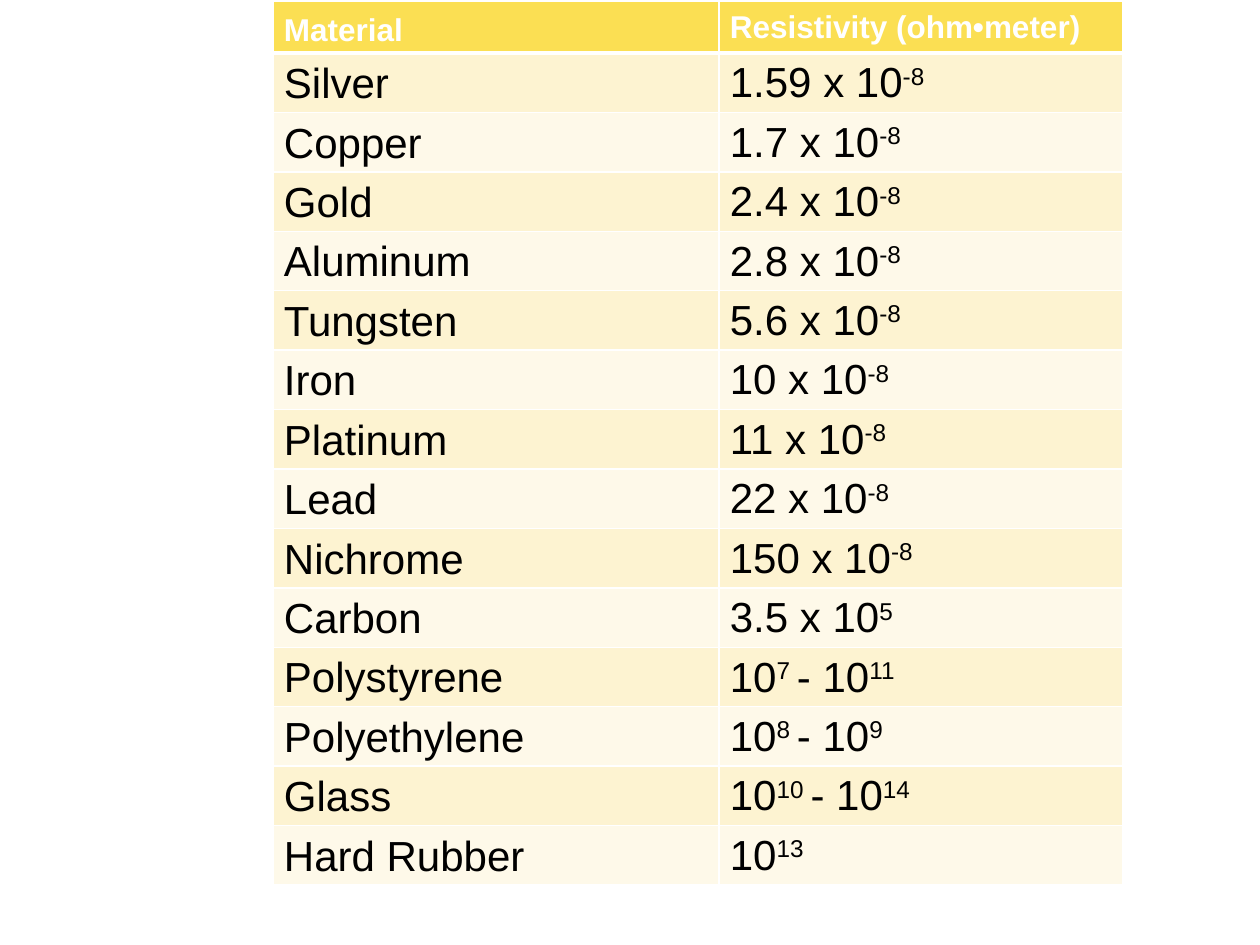
from lxml.etree import SubElement
from pptx import Presentation
from pptx.dml.color import RGBColor
from pptx.enum.text import MSO_ANCHOR
from pptx.oxml.ns import qn
from pptx.util import Pt

HEADINGS = ("Material", "Resistivity (ohm•meter)")
# Pieces of each value alternate between baseline and superscript.
RESISTIVITIES = [
    ("Silver", ("1.59 x 10", "-8")),
    ("Copper", ("1.7 x 10", "-8")),
    ("Gold", ("2.4 x 10", "-8")),
    ("Aluminum", ("2.8 x 10", "-8")),
    ("Tungsten", ("5.6 x 10", "-8")),
    ("Iron", ("10 x 10", "-8")),
    ("Platinum", ("11 x 10", "-8")),
    ("Lead", ("22 x 10", "-8")),
    ("Nichrome", ("150 x 10", "-8")),
    ("Carbon", ("3.5 x 10", "5")),
    ("Polystyrene", ("10", "7 ", "- 10", "11")),
    ("Polyethylene", ("10", "8 ", "- 10", "9")),
    ("Glass", ("10", "10 ", "- 10", "14")),
    ("Hard Rubber", ("10", "13")),
]
COLORS = {
    "header": "FBDF53",
    "odd": "FDF3D1",
    "even": "FEF9E9",
    "white": "FFFFFF",
    "black": "000000",
}
FONT = "Arial"
SLIDE_WIDTH, SLIDE_HEIGHT = 1260, 945
LEFT, TOP = 273, 1
COLUMN_WIDTHS = (446, 404)
HEADER_HEIGHT, BODY_HEIGHT = 52, 832
ANCHORS = (MSO_ANCHOR.BOTTOM, MSO_ANCHOR.MIDDLE)


def px(length):
    return round(length * 9144000 / SLIDE_WIDTH)


def add_border(cell, side, points):
    line = SubElement(cell._tc.get_or_add_tcPr(), qn(f"a:ln{side}"), w=str(Pt(points)))
    fill = SubElement(line, qn("a:solidFill"))
    SubElement(fill, qn("a:srgbClr"), val=COLORS["white"])


def fill_cell(cell, pieces, row, column):
    is_header = row == 0
    band = "header" if is_header else "odd" if row % 2 else "even"
    for side in "LRTB":
        under_header = (row, side) in ((0, "B"), (1, "T"))
        add_border(cell, side, 3 if under_header else 1)
    cell.fill.solid()
    cell.fill.fore_color.rgb = RGBColor.from_string(COLORS[band])
    cell.vertical_anchor = ANCHORS[column]
    cell.margin_left = cell.margin_right = px(11)
    cell.margin_top, cell.margin_bottom = px(6), px(5)

    paragraph = cell.text_frame.paragraphs[0]
    font = paragraph.font
    font.name = FONT
    font.size = Pt(18 if is_header else 24)
    font.bold = is_header
    font.color.rgb = RGBColor.from_string(COLORS["white" if is_header else "black"])
    for index, piece in enumerate(pieces):
        run = paragraph.add_run()
        run.text = piece
        if index % 2:
            run._r.get_or_add_rPr().set("baseline", "30000")


def main():
    presentation = Presentation()
    presentation.slide_width, presentation.slide_height = px(SLIDE_WIDTH), px(SLIDE_HEIGHT)
    slide = presentation.slides.add_slide(presentation.slide_layouts[6])

    rows = [tuple((heading,) for heading in HEADINGS)]
    rows += [((material,), value) for material, value in RESISTIVITIES]
    table = slide.shapes.add_table(
        len(rows), len(HEADINGS), px(LEFT), px(TOP),
        px(sum(COLUMN_WIDTHS)), px(HEADER_HEIGHT + BODY_HEIGHT),
    ).table
    for column, width in zip(table.columns, COLUMN_WIDTHS):
        column.width = px(width)
    for row, contents in enumerate(rows):
        height = BODY_HEIGHT / len(RESISTIVITIES) if row else HEADER_HEIGHT
        table.rows[row].height = px(height)
        for column, pieces in enumerate(contents):
            fill_cell(table.cell(row, column), pieces, row, column)

    presentation.save("out.pptx")


if __name__ == "__main__":
    main()
